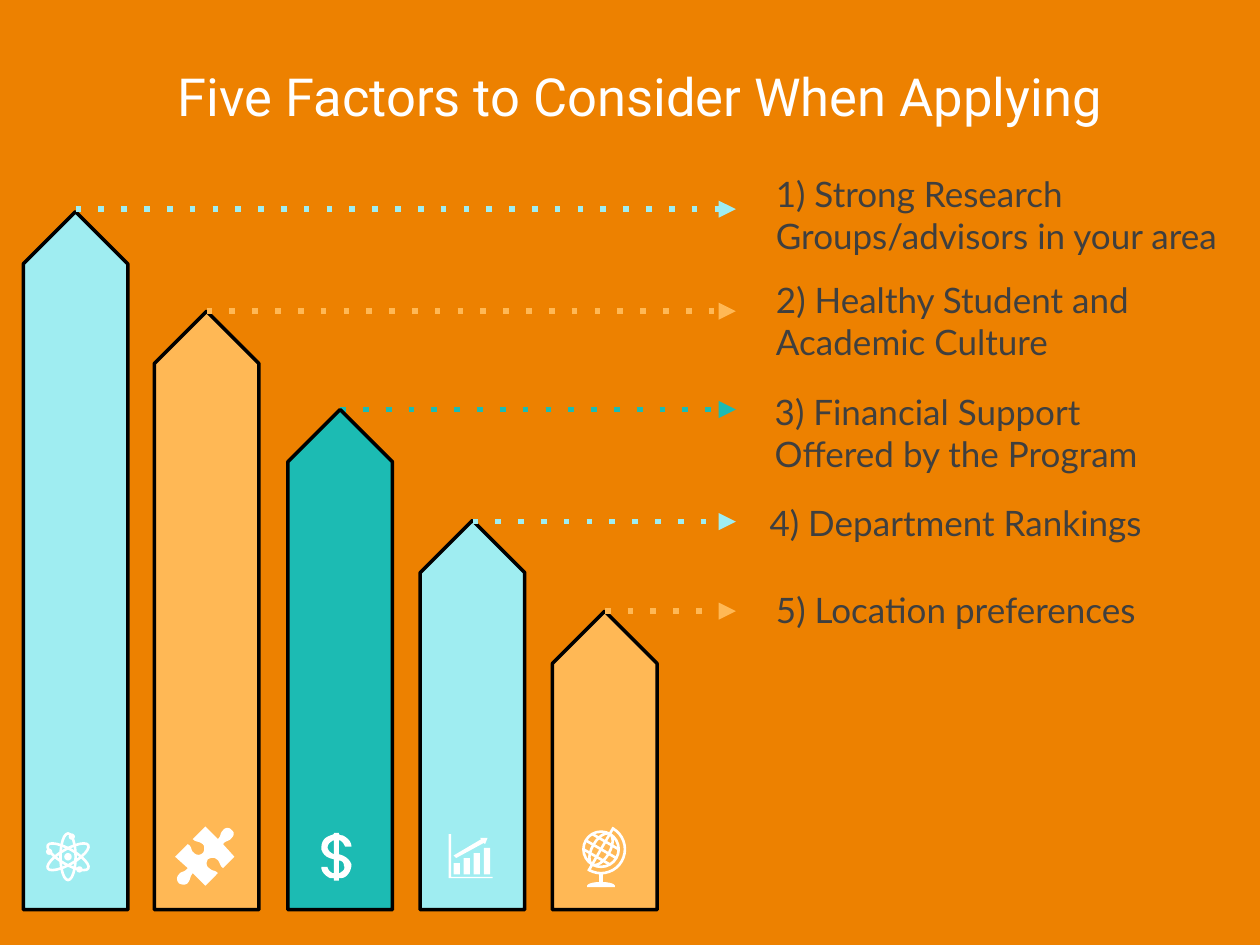
from dataclasses import dataclass
from math import cos, radians, sin

from lxml import etree
from pptx import Presentation
from pptx.dml.color import RGBColor
from pptx.enum.shapes import MSO_CONNECTOR, MSO_SHAPE
from pptx.enum.text import MSO_ANCHOR, PP_ALIGN
from pptx.oxml.ns import qn
from pptx.util import Inches, Pt

PENTAGON, OVAL = MSO_SHAPE.PENTAGON, MSO_SHAPE.OVAL
STRAIGHT = MSO_CONNECTOR.STRAIGHT
CENTER, LEFT = PP_ALIGN.CENTER, PP_ALIGN.LEFT
MIDDLE, TOP = MSO_ANCHOR.MIDDLE, MSO_ANCHOR.TOP

ORANGE = RGBColor(0xED, 0x81, 0x00)
AQUA = RGBColor(0x9F, 0xED, 0xF1)
APRICOT = RGBColor(0xFF, 0xB8, 0x55)
TEAL = RGBColor(0x1C, 0xBB, 0xB3)
WHITE = RGBColor(0xFF, 0xFF, 0xFF)
BLACK = RGBColor(0x00, 0x00, 0x00)
GRAY = RGBColor(0x3F, 0x3F, 0x3F)

BASELINE = 7.22
BAR_WIDTH = 0.83
TRAIL_END = 5.84
STROKE = 1.5
CURVE_STEPS = 6


@dataclass(frozen=True)
class Factor:
    text: str
    center: float
    length: float
    color: RGBColor
    trail_y: float
    label: tuple[float, float, float, float]


FACTORS = [
    Factor("1) Strong Research Groups/advisors in your area", 0.6, 5.54, AQUA, 1.66, (6.06, 1.32, 3.76, 0.77)),
    Factor("2) Healthy Student and Academic Culture", 1.64, 4.75, APRICOT, 2.47, (6.06, 2.16, 3.42, 0.44)),
    Factor("3) Financial Support Offered by the Program", 2.7, 3.97, TEAL, 3.25, (6.05, 3.05, 3.42, 0.77)),
    Factor("4) Department Rankings", 3.75, 3.09, AQUA, 4.14, (6.01, 3.93, 3.31, 0.44)),
    Factor("5) Location preferences", 4.8, 2.37, APRICOT, 4.85, (6.06, 4.62, 3.42, 0.44)),
]

DOLLAR = [
    [(2.69, 6.83), (2.69, 6.93), (2.69, 6.93, 2.7, 6.93, 2.71, 6.92),
     (2.73, 6.91, 2.74, 6.89, 2.73, 6.87), (2.73, 6.84, 2.71, 6.83, 2.69, 6.83)],
    [(2.65, 6.67), (2.65, 6.67, 2.64, 6.67, 2.63, 6.68), (2.61, 6.69, 2.6, 6.71, 2.6, 6.73),
     (2.61, 6.76, 2.63, 6.77, 2.65, 6.78)],
    [(2.65, 6.61), (2.69, 6.61), (2.69, 6.62), (2.7, 6.63, 2.71, 6.63, 2.72, 6.63),
     (2.76, 6.65, 2.79, 6.68, 2.79, 6.72), (2.74, 6.72), (2.73, 6.7, 2.72, 6.68, 2.7, 6.67),
     (2.69, 6.67), (2.69, 6.78), (2.73, 6.79, 2.77, 6.81, 2.79, 6.86),
     (2.79, 6.9, 2.77, 6.94, 2.74, 6.96), (2.72, 6.97, 2.71, 6.97, 2.69, 6.97), (2.69, 6.99),
     (2.65, 6.99), (2.65, 6.97), (2.64, 6.97, 2.63, 6.97, 2.62, 6.97),
     (2.58, 6.95, 2.55, 6.92, 2.55, 6.88), (2.6, 6.88), (2.6, 6.9, 2.62, 6.92, 2.64, 6.93),
     (2.65, 6.93), (2.65, 6.82), (2.61, 6.81, 2.57, 6.8, 2.55, 6.74),
     (2.55, 6.7, 2.56, 6.66, 2.6, 6.64), (2.62, 6.63, 2.63, 6.63, 2.65, 6.62)],
]
PUZZLE = [
    [(1.84, 6.59), (1.86, 6.6, 1.86, 6.63, 1.84, 6.65), (1.82, 6.68, 1.79, 6.67, 1.77, 6.7),
     (1.86, 6.8), (1.77, 6.89), (1.74, 6.87, 1.75, 6.84, 1.72, 6.82),
     (1.7, 6.8, 1.67, 6.81, 1.65, 6.82), (1.64, 6.84, 1.63, 6.87, 1.66, 6.89),
     (1.69, 6.92, 1.7, 6.9, 1.73, 6.93), (1.63, 7.03), (1.53, 6.93),
     (1.5, 6.97, 1.52, 6.97, 1.49, 7.01), (1.47, 7.03, 1.43, 7.02, 1.42, 7.01),
     (1.4, 6.99, 1.4, 6.96, 1.42, 6.94), (1.44, 6.91, 1.46, 6.93, 1.49, 6.89),
     (1.39, 6.8), (1.49, 6.7), (1.53, 6.72, 1.51, 6.75, 1.54, 6.77),
     (1.56, 6.79, 1.59, 6.79, 1.61, 6.77), (1.62, 6.76, 1.63, 6.72, 1.61, 6.7),
     (1.57, 6.67, 1.56, 6.69, 1.53, 6.66), (1.63, 6.56), (1.73, 6.66),
     (1.76, 6.63, 1.74, 6.62, 1.77, 6.59), (1.79, 6.56, 1.83, 6.57, 1.84, 6.59)],
]
GROWTH = [
    [(x, 6.85 - 0.04 * i), (x + 0.05, 6.85 - 0.04 * i), (x + 0.05, 6.94), (x, 6.94)]
    for i, x in enumerate([3.6, 3.68, 3.76, 3.84])
] + [
    [(3.81, 6.65), (3.87, 6.65), (3.85, 6.7), (3.84, 6.69), (3.62, 6.81), (3.6, 6.79), (3.82, 6.66)],
    [(3.56, 6.62), (3.58, 6.62), (3.58, 6.96), (3.91, 6.96), (3.91, 6.97), (3.56, 6.97)],
]
GLOBE_BASE = [[(4.66, 7.04), (4.65, 7.02, 4.69, 7.0, 4.77, 7.0), (4.85, 7.0, 4.89, 7.02, 4.88, 7.04)]]


def write(frame, text: str, *, font: str, size: float, color: RGBColor, align=LEFT, anchor=TOP, pad=0.05) -> None:
    frame.word_wrap = True
    frame.vertical_anchor = anchor
    frame.margin_left = frame.margin_right = Inches(0.1)
    frame.margin_top = frame.margin_bottom = Inches(pad)
    paragraph = frame.paragraphs[0]
    paragraph.text = text
    paragraph.alignment = align
    paragraph.font.name = font
    paragraph.font.size = Pt(size)
    paragraph.font.color.rgb = color


def paint(shape, fill: RGBColor | None, line: RGBColor | None, width: float = STROKE) -> None:
    shape.shadow.inherit = False
    if fill is None:
        shape.fill.background()
    else:
        shape.fill.solid()
        shape.fill.fore_color.rgb = fill
    if line is None:
        shape.line.fill.background()
    else:
        shape.line.color.rgb = line
        shape.line.width = Pt(width)


def connect(shapes, start: tuple, end: tuple, color: RGBColor, width: float = STROKE):
    connector = shapes.add_connector(STRAIGHT, *(Inches(v) for v in (*start, *end)))
    connector.line.color.rgb = color
    connector.line.width = Pt(width)
    etree.SubElement(connector._element.spPr, qn("a:effectLst"))
    return connector


def draw_bar(shapes, factor: Factor) -> None:
    left = factor.center - factor.length / 2
    top = BASELINE - factor.length / 2 - BAR_WIDTH / 2
    bar = shapes.add_shape(PENTAGON, Inches(left), Inches(top), Inches(factor.length), Inches(BAR_WIDTH))
    bar.rotation = 270
    paint(bar, factor.color, BLACK, 2)


def draw_trail(shapes, factor: Factor) -> None:
    start, end = (factor.center, factor.trail_y), (TRAIL_END, factor.trail_y)
    trail = connect(shapes, start, end, factor.color, 3.25)
    ln = trail.line._get_or_add_ln()
    etree.SubElement(ln, qn("a:prstDash"), val="dot")
    etree.SubElement(ln, qn("a:tailEnd"), type="triangle")


def draw_oval(shapes, center: tuple, width: float, height: float, *, angle: float = 0, solid: bool = False) -> None:
    x, y = center
    oval = shapes.add_shape(OVAL, Inches(x - width / 2), Inches(y - height / 2), Inches(width), Inches(height))
    oval.rotation = angle
    paint(oval, WHITE if solid else None, None if solid else WHITE)


def flatten(contour: list[tuple]) -> list[tuple]:
    points = [contour[0]]
    for step in contour[1:]:
        if len(step) == 2:
            points.append(step)
            continue
        nodes = [points[-1], step[:2], step[2:4], step[4:]]
        for i in range(1, CURVE_STEPS + 1):
            t = i / CURVE_STEPS
            weights = ((1 - t) ** 3, 3 * t * (1 - t) ** 2, 3 * t * t * (1 - t), t ** 3)
            points.append(tuple(sum(w * n[axis] for w, n in zip(weights, nodes)) for axis in (0, 1)))
    return points


def draw_outline(shapes, contours: list[list[tuple]], *, solid: bool = True) -> None:
    paths = [[(Inches(x), Inches(y)) for x, y in flatten(contour)] for contour in contours]
    builder = shapes.build_freeform(*paths[0][0], scale=1.0)
    builder.add_line_segments(paths[0][1:], close=solid)
    for points in paths[1:]:
        builder.move_to(*points[0])
        builder.add_line_segments(points[1:], close=solid)
    paint(builder.convert_to_shape(), WHITE if solid else None, None if solid else WHITE)


def draw_atom(shapes) -> None:
    nucleus = (0.54, 6.8)
    for angle in (0, 60, 120):
        draw_oval(shapes, nucleus, 0.12, 0.37, angle=angle)
    draw_oval(shapes, nucleus, 0.06, 0.06, solid=True)
    for electron in ((0.57, 6.64), (0.39, 6.76), (0.63, 6.9)):
        draw_oval(shapes, electron, 0.05, 0.05, solid=True)


def draw_globe(shapes) -> None:
    x, y = 4.77, 6.74
    tilt = radians(30)

    def tilted(across: float, up: float) -> tuple:
        return x + across * cos(tilt) + up * sin(tilt), y + across * sin(tilt) - up * cos(tilt)

    for width in (0.28, 0.14):
        draw_oval(shapes, (x, y), width, 0.28, angle=30)
    for up, half in ((-0.07, 0.12), (0, 0.14), (0.07, 0.12)):
        connect(shapes, tilted(-half, up), tilted(half, up), WHITE)
    connect(shapes, tilted(0, -0.2), tilted(0, 0.2), WHITE)
    angles = [radians(a) for a in range(-60, 121, 10)]
    draw_outline(shapes, [[(x + 0.19 * cos(a), y + 0.19 * sin(a)) for a in angles]], solid=False)
    connect(shapes, (x, 6.93), (x, 7.01), WHITE, 2.5)
    draw_outline(shapes, GLOBE_BASE)


def main() -> None:
    deck = Presentation()
    deck.slide_width, deck.slide_height = Inches(10), Inches(7.5)
    slide = deck.slides.add_slide(deck.slide_layouts[5])
    slide.background.fill.solid()
    slide.background.fill.fore_color.rgb = ORANGE
    shapes = slide.shapes

    title = shapes.title
    title.left, title.top, title.width, title.height = (Inches(v) for v in (0.08, 0.24, 10, 1.03))
    write(title.text_frame, "Five Factors to Consider When Applying", font="Roboto", size=30,
          color=WHITE, align=CENTER, anchor=MIDDLE, pad=0.1)

    for bars, trails in ((FACTORS[:2], FACTORS[:3]), (FACTORS[2:], FACTORS[3:])):
        for factor in bars:
            draw_bar(shapes, factor)
        for factor in trails:
            draw_trail(shapes, factor)
    for factor in FACTORS:
        label = shapes.add_textbox(*(Inches(v) for v in factor.label))
        write(label.text_frame, factor.text, font="Lato", size=20, color=GRAY)

    draw_atom(shapes)
    for icon in (PUZZLE, DOLLAR, GROWTH):
        draw_outline(shapes, icon)
    draw_globe(shapes)
    deck.save("out.pptx")


if __name__ == "__main__":
    main()
